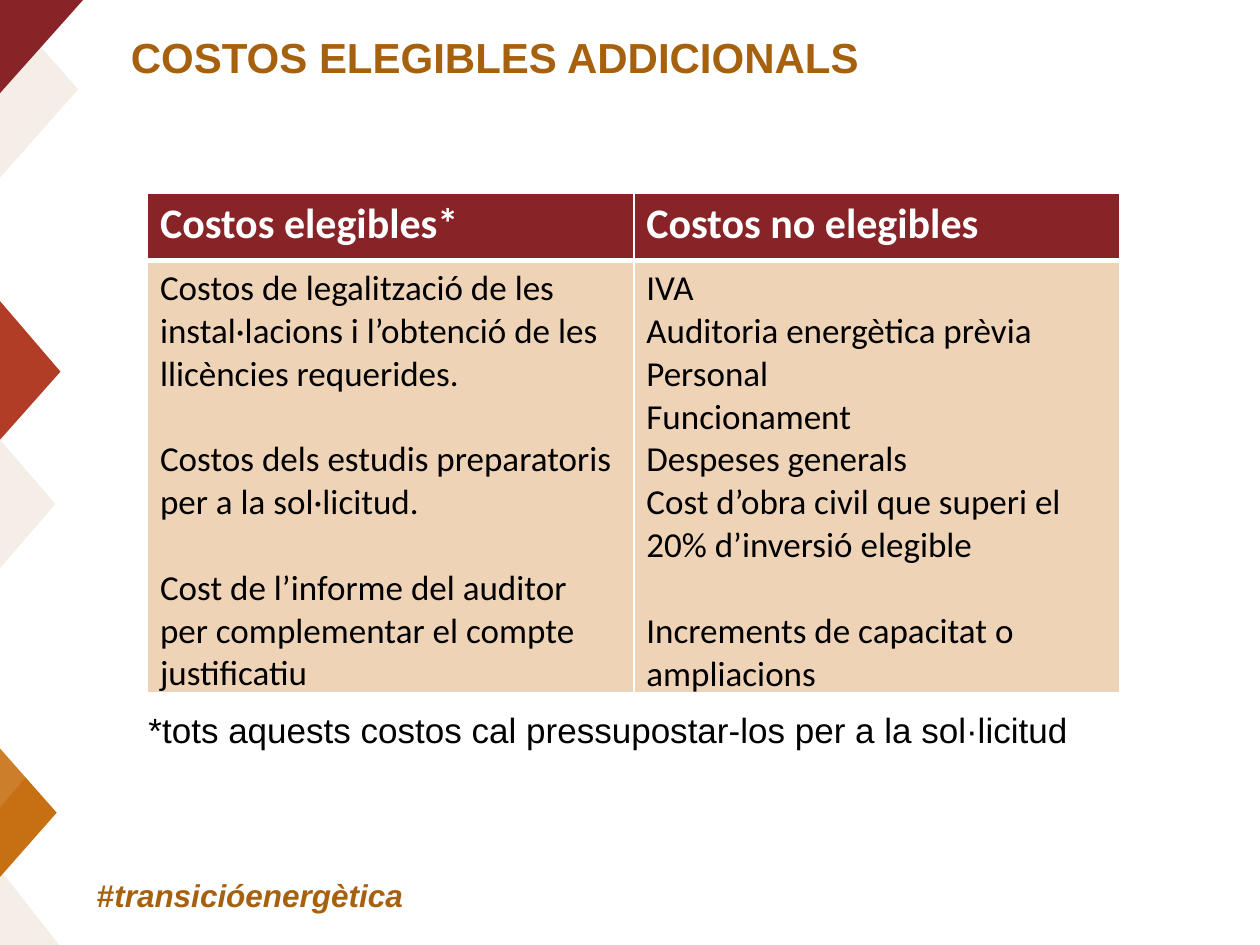
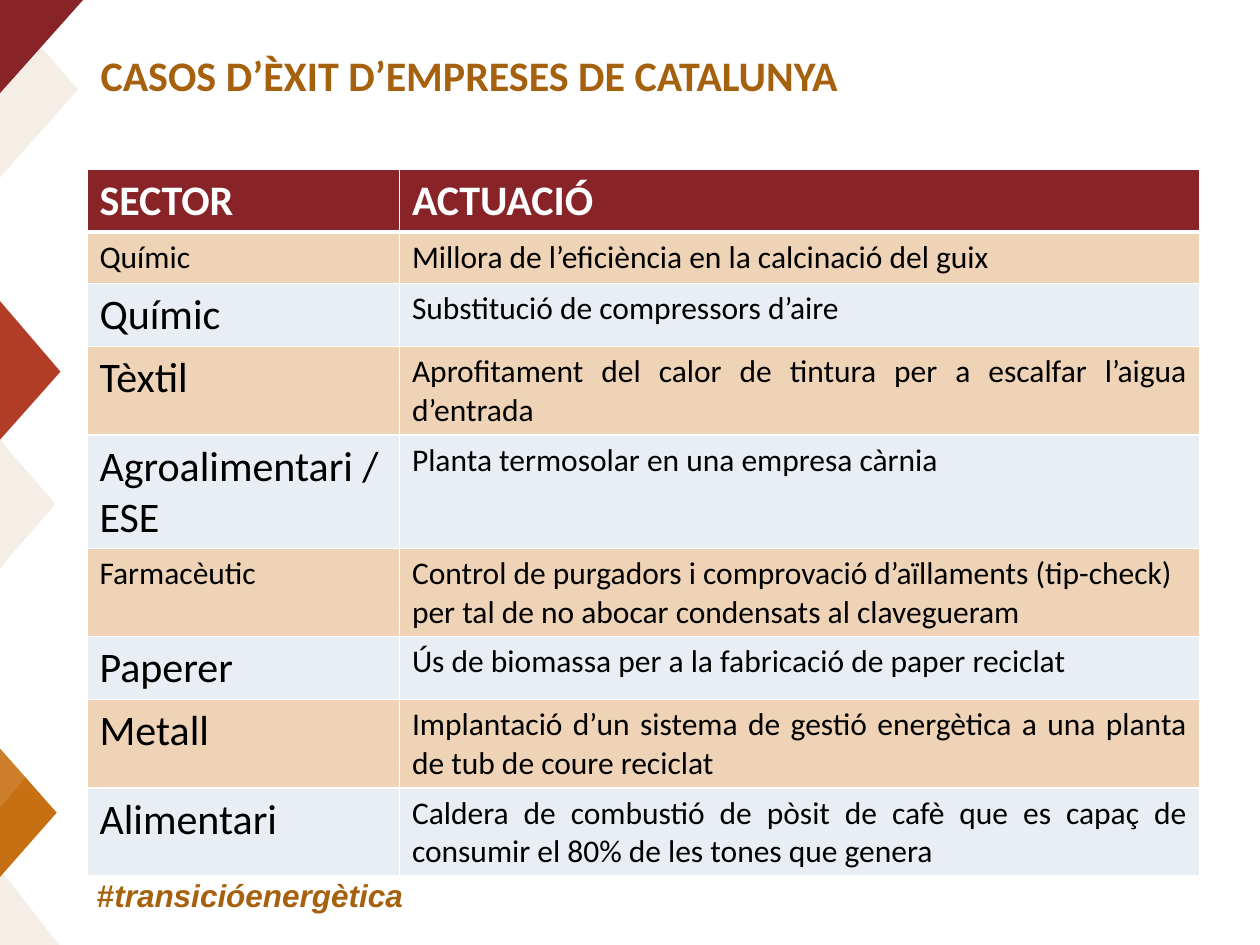
import collections

import lxml.etree
import pptx
import pptx.dml.color
import pptx.enum.text
import pptx.oxml.ns
import pptx.util

COLOURS = {
    "garnet": "882428",
    "brick": "B13D27",
    "amber": "C77013",
    "brown": "A6610F",
    "mist": "E9EDF4",
    "white": "FFFFFF",
    "black": "000000",
}
COLUMNS, ROWS = 100, 75
UNIT = pptx.util.Inches(0.1)  # one square of the slide grid
JUSTIFY = pptx.enum.text.PP_ALIGN.JUSTIFY
LINE_HEIGHT = 1.22  # Calibri line height as a share of its size

Box = collections.namedtuple("Box", "left top width height")
SLIDE_BOX = Box(0, 0, COLUMNS, ROWS)


def grid(*lengths):
    """Turn grid squares into EMU."""
    return [round(length * UNIT) for length in lengths]


def inside(box, left, top, width, height):
    """Place a part relative to the corner of a box."""
    return Box(box.left + left, box.top + top, width, height)


def rgb(name):
    return pptx.dml.color.RGBColor.from_string(COLOURS[name])


def paint(fill, element, colour, opacity=100):
    fill.solid()
    fill.fore_color.rgb = rgb(colour)
    if opacity < 100:
        tag = pptx.oxml.ns.qn("a:srgbClr")
        alpha = lxml.etree.SubElement(next(element.iter(tag)), pptx.oxml.ns.qn("a:alpha"))
        alpha.set("val", str(opacity * 1000))


def write(paragraph, text, size=20, font="Calibri", colour="black", bold=False,
          italic=False, align=None, before=None):
    """Add one formatted run to a paragraph."""
    if align is not None:
        paragraph.alignment = align
    if before:
        paragraph.space_before = pptx.util.Pt(before)
    run = paragraph.add_run()
    run.text = text
    run.font.size = pptx.util.Pt(size)
    run.font.name = font
    run.font.bold = bold
    run.font.italic = italic
    run.font.color.rgb = rgb(colour)


def add_text_box(slide, box, wrap=True):
    """Add a text box and return its first paragraph."""
    frame = slide.shapes.add_textbox(*grid(*box)).text_frame
    frame.word_wrap = wrap
    return frame.paragraphs[0]


def add_title(slide, box, text, **text_format):
    write(add_text_box(slide, box), text, size=24, colour="brown", bold=True, **text_format)


def add_triangle(slide, box, points, colour, opacity=100):
    corners = [grid(box.left + x, box.top + y) for x, y in points]
    builder = slide.shapes.build_freeform(*corners[0], scale=1.0)
    builder.add_line_segments(corners[1:], close=True)
    shape = builder.convert_to_shape()
    shape.shadow.inherit = False
    shape.line.fill.background()
    paint(shape.fill, shape._element.spPr, colour, opacity)


def add_side_band(slide, box):
    """Draw the column of half diamonds on the left edge."""
    def half_diamond(top, tip_x, tip_y, bottom, *fill):
        add_triangle(slide, box, [(0, bottom), (0, top), (tip_x, tip_y)], *fill)

    half_diamond(59.4, 4.5, 64.5, 69.6, "amber")
    half_diamond(34.9, 4.4, 40, 45.1, "brown", 10)
    half_diamond(23.9, 4.8, 29.5, 34.9, "brick")
    half_diamond(0, 6.2, 7.1, 14.1, "brown", 10)
    half_diamond(0, 6.6, 0, 7.4, "garnet")
    half_diamond(69, 4.7, 75, 75, "brown", 10)
    half_diamond(53.8, 4.4, 58.9, 64.1, "white", 10)


def add_footer(slide, box):
    paragraph = add_text_box(slide, box)
    style = {"size": 18, "font": "Arial", "colour": "brown", "bold": True}
    write(paragraph, "#", **style)
    write(paragraph, "transicióenergètica", italic=True, **style)


def add_frame(presentation):
    """Add a blank slide with the parts every slide shares."""
    slide = presentation.slides.add_slide(presentation.slide_layouts[6])
    add_side_band(slide, inside(SLIDE_BOX, 0, 0, 7, ROWS))
    add_footer(slide, inside(SLIDE_BOX, 6.7, 69, 29, 4))
    return slide


def set_borders(cell, top, bottom):
    properties = cell._tc.get_or_add_tcPr()
    widths = {"a:lnL": 1, "a:lnR": 1, "a:lnT": top, "a:lnB": bottom}
    for position, (tag, width) in enumerate(widths.items()):
        line = lxml.etree.Element(pptx.oxml.ns.qn(tag), w=str(pptx.util.Pt(width)))
        fill = lxml.etree.SubElement(line, pptx.oxml.ns.qn("a:solidFill"))
        lxml.etree.SubElement(fill, pptx.oxml.ns.qn("a:srgbClr"), val=COLOURS["white"])
        properties.insert(position, line)


def add_grid_table(slide, box, widths, heights, headings):
    """Add a table with its headings, fills and borders; body text follows."""
    shape = slide.shapes.add_table(len(heights), len(widths), *grid(*box))
    table = shape.table
    table.horz_banding = False
    for column, width in zip(table.columns, grid(*widths)):
        column.width = width
    for row, height in zip(table.rows, grid(*heights)):
        row.height = height
    for index, row in enumerate(table.rows):
        for cell in row.cells:
            if index == 0:
                paint(cell.fill, cell._tc, "garnet")
            elif index % 2:
                paint(cell.fill, cell._tc, "amber", 30)
            else:
                paint(cell.fill, cell._tc, "mist")
            set_borders(cell, top=3 if index == 1 else 1, bottom=3 if index == 0 else 1)
    for cell, heading in zip(table.rows[0].cells, headings):
        write(cell.text_frame.paragraphs[0], heading, size=24, colour="white", bold=True)
    return table


def write_groups(cell, groups, size=20):
    """Write groups of paragraphs, one line apart."""
    cell.margin_bottom = 0
    frame = cell.text_frame
    for group_index, group in enumerate(groups):
        for line_index, text in enumerate(group):
            first = group_index == line_index == 0
            paragraph = frame.paragraphs[0] if first else frame.add_paragraph()
            new_group = group_index > 0 and line_index == 0
            write(paragraph, text, size=size, before=size * LINE_HEIGHT if new_group else None)


def add_costs_slide(presentation, box):
    slide = add_frame(presentation)
    add_title(slide, inside(box, 9.4, 2, 88.3, 5), "COSTOS ELEGIBLES ADDICIONALS", font="Arial")
    table = add_grid_table(
        slide, inside(box, 11.7, 15.3, 77.2, 39.7), [38.6] * 2, [5.4, 34.3],
        ["Costos elegibles*", "Costos no elegibles"])
    eligible = [
        ["Costos de legalització de les instal·lacions i l’obtenció de les llicències requerides."],
        ["Costos dels estudis preparatoris per a la sol·licitud."],
        ["Cost de l’informe del auditor per complementar el compte justificatiu"],
    ]
    not_eligible = [
        ["IVA", "Auditoria energètica prèvia", "Personal", "Funcionament", "Despeses generals",
         "Cost d’obra civil que superi el 20% d’inversió elegible"],
        ["Increments de capacitat o ampliacions"],
    ]
    for cell, groups in zip(table.rows[1].cells, [eligible, not_eligible]):
        write_groups(cell, groups)
    note = add_text_box(slide, inside(box, 10.8, 55.7, 75.5, 7.7), wrap=False)
    write(note, "*tots aquests costos cal pressupostar-los per a la sol·licitud", font="Arial")


def add_cases_slide(presentation, box):
    slide = add_frame(presentation)
    add_title(slide, inside(box, 7, 3.4, 79.5, 5.2), "CASOS D’ÈXIT D’EMPRESES DE CATALUNYA")
    large, small = (24, JUSTIFY), (18, None)
    cases = [
        ("Químic", "Millora de l’eficiència en la calcinació del guix", small),
        ("Químic", "Substitució de compressors d’aire", large),
        ("Tèxtil", "Aprofitament del calor de tintura per a escalfar l’aigua d’entrada", large),
        ("Agroalimentari / ESE", "Planta termosolar en una empresa càrnia", large),
        ("Farmacèutic", "Control de purgadors i comprovació d’aïllaments (tip-check) "
         "per tal de no abocar condensats al clavegueram", small),
        ("Paperer", "Ús de biomassa per a la fabricació de paper reciclat", large),
        ("Metall", "Implantació d’un sistema de gestió energètica a una planta "
         "de tub de coure reciclat", large),
        ("Alimentari", "Caldera de combustió de pòsit de cafè que es capaç de "
         "consumir el 80% de les tones que genera", large),
    ]
    heights = [4.1] * (len(cases) + 1)
    table = add_grid_table(
        slide, inside(box, 6.9, 13.4, 88.3, sum(heights)), [24.8, 63.5], heights,
        ["SECTOR", "ACTUACIÓ"])
    for index, (sector, action, (sector_size, align)) in enumerate(cases, start=1):
        write(table.cell(index, 0).text_frame.paragraphs[0], sector, size=sector_size)
        write(table.cell(index, 1).text_frame.paragraphs[0], action, size=18, align=align)


def main():
    presentation = pptx.Presentation()
    presentation.slide_width, presentation.slide_height = grid(COLUMNS, ROWS)
    add_costs_slide(presentation, SLIDE_BOX)
    add_cases_slide(presentation, SLIDE_BOX)
    presentation.save("out.pptx")


if __name__ == "__main__":
    main()
